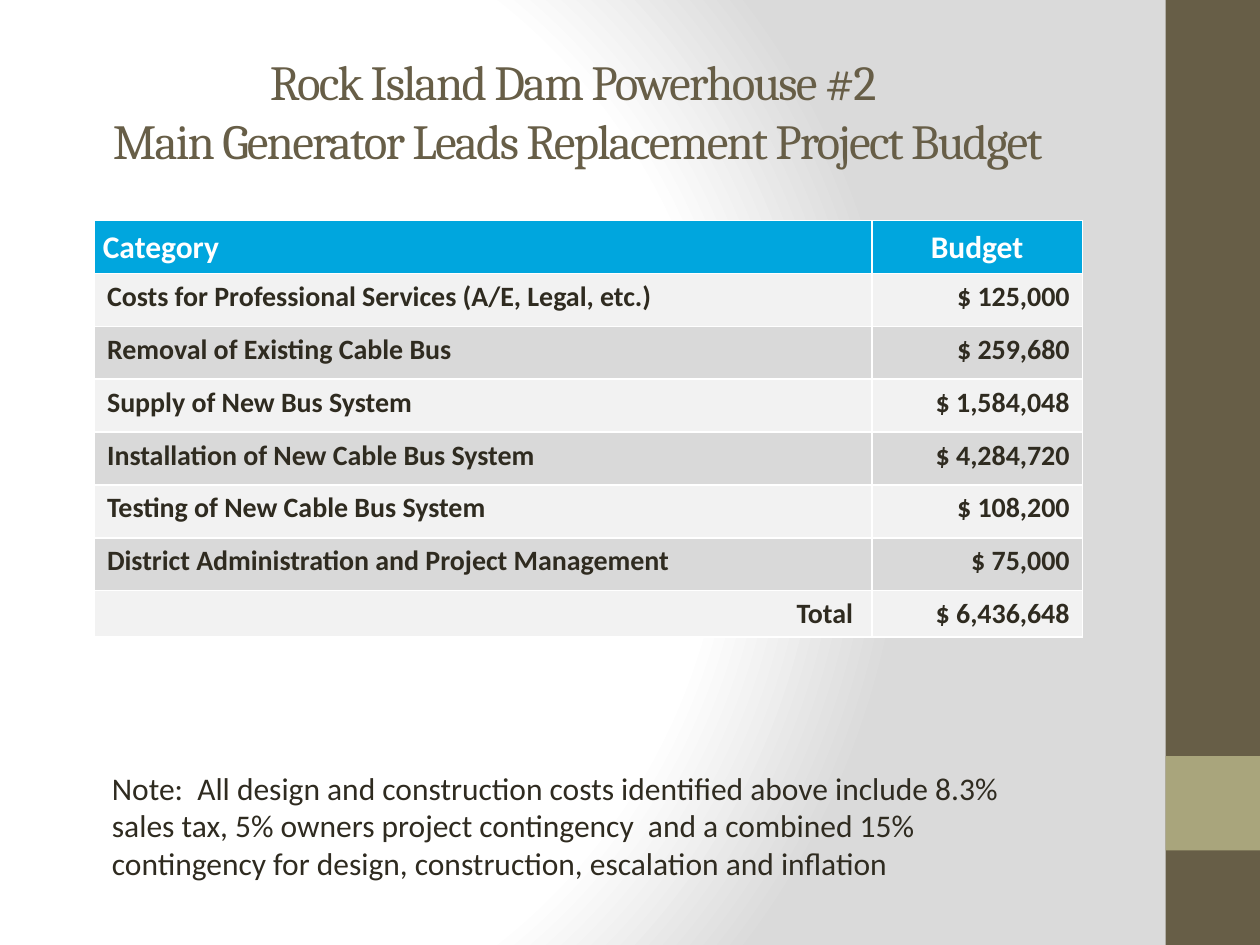
from pptx import Presentation
from pptx.dml.color import RGBColor
from pptx.enum.shapes import MSO_SHAPE as Preset
from pptx.enum.text import MSO_ANCHOR as Anchor, PP_ALIGN as Align
from pptx.oxml import parse_xml
from pptx.oxml.ns import nsdecls
from pptx.util import Inches, Pt

COLORS = {
    "white": "FFFFFF",
    "shade": "DADADA",
    "brown": "675E47",
    "olive": "A9A57C",
    "ink": "2F2B20",
    "header": "00A6DE",
    "light": "F2F2F2",
    "dark": "D9D9D9",
}

BUDGET = [
    ("Costs for Professional Services (A/E, Legal, etc.)", "$ 125,000"),
    ("Removal of Existing Cable Bus", "$ 259,680"),
    ("Supply of New Bus System", "$ 1,584,048"),
    ("Installation of New Cable Bus System", "$ 4,284,720"),
    ("Testing of New Cable Bus System", "$ 108,200"),
    ("District Administration and Project Management", "$ 75,000"),
    ("Total ", "$ 6,436,648"),
]


class SlideBuilder:
    title_font = "Cambria"
    body_font = "Calibri"

    def __init__(self, page):
        self.page = page

    def color(self, name):
        return RGBColor.from_string(COLORS[name])

    def background(self, stops):
        stop_xml = "".join(
            f'<a:gs pos="{percent * 1000}"><a:srgbClr val="{COLORS[name]}"/></a:gs>'
            for percent, name in stops
        )
        self.page.element.cSld.insert(0, parse_xml(
            f'<p:bg {nsdecls("p", "a")}><p:bgPr><a:gradFill rotWithShape="1">'
            f'<a:gsLst>{stop_xml}</a:gsLst><a:path path="circle">'
            '<a:fillToRect l="20000" t="50000" r="100000" b="50000"/></a:path>'
            '</a:gradFill><a:effectLst/></p:bgPr></p:bg>'
        ))

    def block(self, left, top, width, height, fill):
        box = self.page.shapes.add_shape(
            Preset.RECTANGLE, Inches(left), Inches(top), Inches(width), Inches(height))
        box.shadow.inherit = False
        box.fill.solid()
        box.fill.fore_color.rgb = self.color(fill)
        box.line.fill.background()

    def style(self, para, size, color, font=body_font, bold=False, align=Align.LEFT):
        para.alignment = align
        para.font.name = font
        para.font.size = Pt(size)
        para.font.bold = bold
        para.font.color.rgb = self.color(color)

    def text(self, left, top, width, height, words, anchor=Anchor.TOP, tracking=0, **style):
        box = self.page.shapes.add_textbox(
            Inches(left), Inches(top), Inches(width), Inches(height))
        frame = box.text_frame
        frame.word_wrap = True
        frame.vertical_anchor = anchor
        para = frame.paragraphs[0]
        para.text = words
        self.style(para, **style)
        if tracking:
            for span in para.runs:
                span.font._element.set("spc", str(tracking * 100))

    def cell(self, cell, words, fill, **style):
        cell.text = words
        self.style(cell.text_frame.paragraphs[0], bold=True, **style)
        props = cell._tc.get_or_add_tcPr()
        for side in ("lnL", "lnR", "lnT", "lnB"):
            props.append(parse_xml(
                f'<a:{side} {nsdecls("a")} w="12700"><a:solidFill>'
                f'<a:srgbClr val="{COLORS["white"]}"/></a:solidFill></a:{side}>'
            ))
        cell.fill.solid()
        cell.fill.fore_color.rgb = self.color(fill)

    def table(self, left, top, widths, heights, headings, records):
        grid = self.page.shapes.add_table(
            len(heights), len(widths), Inches(left), Inches(top),
            Inches(sum(widths)), Inches(sum(heights))).table
        for column, width in zip(grid.columns, widths):
            column.width = Inches(width)
        for row, height in zip(grid.rows, heights):
            row.height = Inches(height)
        for cell, words, align in zip(grid.rows[0].cells, headings, (Align.LEFT, Align.CENTER)):
            self.cell(cell, words, "header", size=18, color="white", align=align)
            cell.vertical_anchor = Anchor.MIDDLE
            cell.margin_left = cell.margin_top = cell.margin_right = Inches(0.01)
            cell.margin_bottom = 0
        for number, record in enumerate(records, 1):
            fill = "light" if number % 2 else "dark"
            label_align = Align.RIGHT if number == len(records) else Align.LEFT
            for column, align in enumerate((label_align, Align.RIGHT)):
                self.cell(grid.cell(number, column), record[column], fill,
                          size=16, color="ink", align=align)


def main():
    deck = Presentation()
    deck.slide_width, deck.slide_height = Inches(10), Inches(7.5)
    slide = SlideBuilder(deck.slides.add_slide(deck.slide_layouts[6]))

    slide.background([(0, "white"), (75, "white"), (100, "shade")])
    slide.block(9.25, 0, 0.75, 7.5, "brown")
    slide.block(9.25, 6, 0.75, 0.75, "olive")
    slide.text(
        0.42, 0.25, 8.33, 1.25,
        "Rock Island Dam Powerhouse #2 \vMain Generator Leads Replacement Project Budget",
        anchor=Anchor.MIDDLE, tracking=-1, size=28, color="brown",
        font=slide.title_font, align=Align.CENTER)
    slide.table(0.75, 1.75, [6.17, 1.67], [0.42] * len(BUDGET) + [0.35],
                [" Category", "Budget"], BUDGET)
    slide.text(
        0.79, 6.05, 7.74, 1.01,
        "Note:  All design and construction costs identified above include 8.3% "
        "sales tax, 5% owners project contingency  and a combined 15% "
        "contingency for design, construction, escalation and inflation",
        size=18, color="ink")
    deck.save("out.pptx")


if __name__ == "__main__":
    main()
